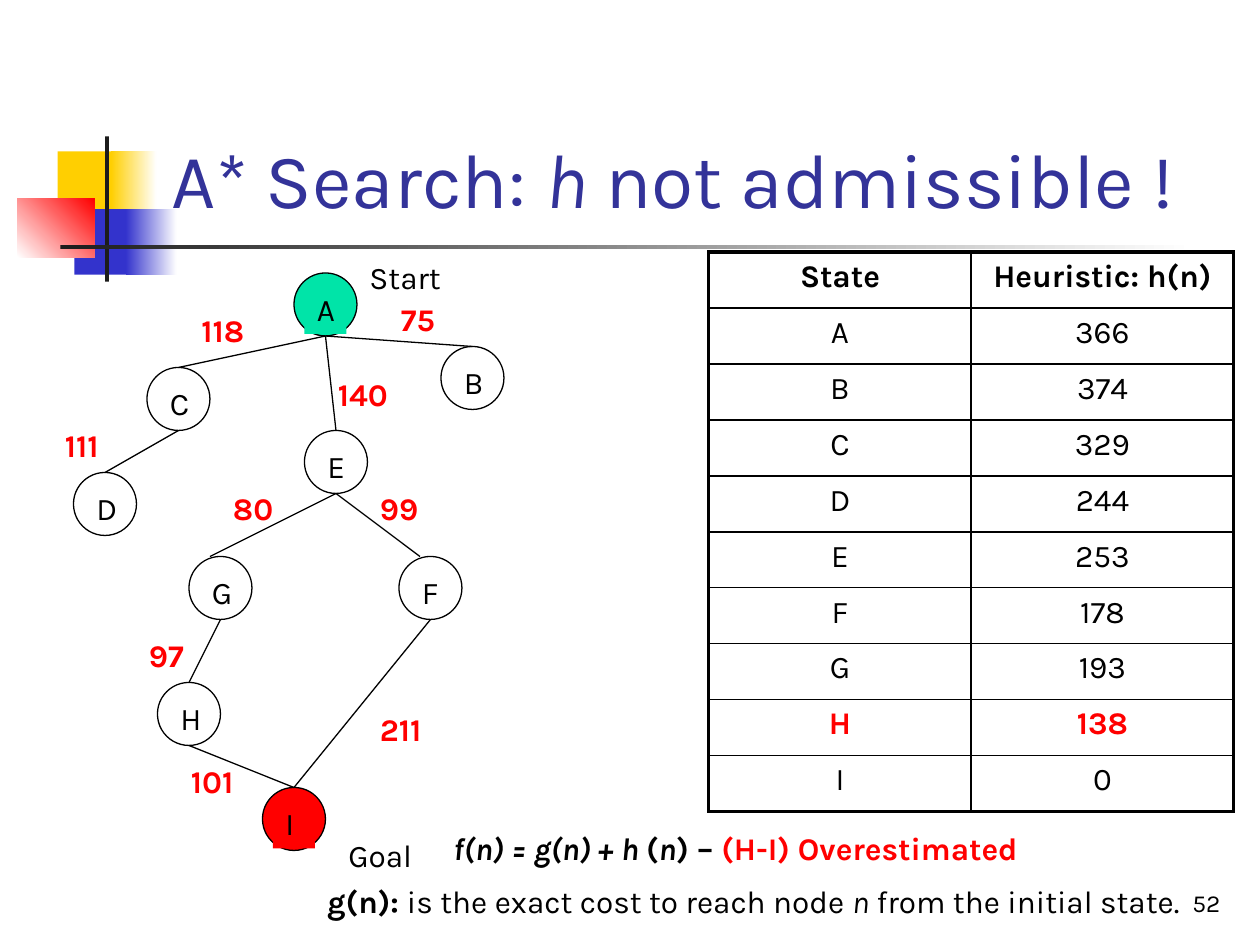
from dataclasses import dataclass
from typing import Optional

from lxml.etree import SubElement
from pptx import Presentation
from pptx.dml.color import RGBColor
from pptx.enum.shapes import MSO_CONNECTOR, MSO_SHAPE
from pptx.enum.text import MSO_ANCHOR, MSO_AUTO_SIZE, PP_ALIGN
from pptx.oxml.ns import qn
from pptx.util import Pt

BLACK = RGBColor(0x00, 0x00, 0x00)
WHITE = RGBColor(0xFF, 0xFF, 0xFF)
RED = RGBColor(0xFF, 0x00, 0x00)
GREEN = RGBColor(0x00, 0xE4, 0xA8)
YELLOW = RGBColor(0xFF, 0xCF, 0x01)
BLUE = RGBColor(0x33, 0x33, 0xCC)
INDIGO = RGBColor(0x33, 0x33, 0x99)
CHARCOAL = RGBColor(0x1C, 0x1C, 0x1C)
FONT = "Karla"
DIAMETER = 36
LABEL_HEIGHT = 28.8


@dataclass
class Block:
    left: float
    top: float
    width: float
    height: float
    color: RGBColor
    fade_to: Optional[RGBColor] = None
    angle: float = 0


@dataclass
class Node:
    name: str
    left: float
    top: float
    color: Optional[RGBColor] = None


@dataclass
class Edge:
    parent: str
    child: str
    cost: str
    cost_left: float
    cost_top: float
    end_shift: float = 0


BLOCKS = [
    Block(33, 86.5, 34.5, 37.5, YELLOW),
    Block(63.5, 86.5, 26, 37.5, YELLOW, WHITE),
    Block(42.5, 119.5, 33, 37.5, BLUE),
    Block(72, 119.5, 29, 37.5, BLUE, WHITE),
    Block(10, 113.5, 44, 33.5, WHITE, RED, 45),
    Block(60, 78, 2.25, 83, CHARCOAL),
    Block(34.5, 140, 648, 2.5, CHARCOAL, WHITE),
]
NODES = [
    Node("A", 168, 156, GREEN),
    Node("B", 252, 198),
    Node("C", 84, 210),
    Node("D", 42, 270),
    Node("E", 174, 246),
    Node("F", 228, 318),
    Node("G", 108, 318),
    Node("H", 90, 390),
    Node("I", 150, 450, RED),
]
EDGES = [
    Edge("A", "B", "75", 222, 168),
    Edge("A", "C", "118", 108, 174),
    Edge("A", "E", "140", 186, 211),
    Edge("C", "D", "111", 30, 240),
    Edge("E", "F", "99", 210, 276, -6),
    Edge("E", "G", "80", 126, 276, -6),
    Edge("G", "H", "97", 78, 360),
    Edge("F", "I", "211", 210, 402),
    Edge("H", "I", "101", 102, 432),
]
HEURISTICS = [
    ("State", "Heuristic: h(n)"),
    ("A", "366"), ("B", "374"), ("C", "329"), ("D", "244"), ("E", "253"),
    ("F", "178"), ("G", "193"), ("H", "138"), ("I", "0"),
]


def write(paragraph, text: str, size: float = 18, color: RGBColor = BLACK,
          bold: bool = False, italic: bool = False, align=PP_ALIGN.LEFT) -> None:
    paragraph.alignment = align
    run = paragraph.add_run()
    run.text = text
    run.font.name = FONT
    run.font.size = Pt(size)
    run.font.color.rgb = color
    run.font.bold = bold
    run.font.italic = italic


def add_text_box(slide, left: float, top: float, width: float, height: float = LABEL_HEIGHT):
    text_box = slide.shapes.add_textbox(Pt(left), Pt(top), Pt(width), Pt(height))
    text_box.text_frame.word_wrap = True
    return text_box


def add_block(slide, block: Block) -> None:
    shape = slide.shapes.add_shape(MSO_SHAPE.RECTANGLE, Pt(block.left), Pt(block.top),
                                   Pt(block.width), Pt(block.height))
    shape.shadow.inherit = False
    shape.line.fill.background()
    if block.fade_to is None:
        shape.fill.solid()
        shape.fill.fore_color.rgb = block.color
    else:
        shape.fill.gradient()
        shape.fill.gradient_angle = block.angle
        for stop, color in zip(shape.fill.gradient_stops, (block.color, block.fade_to)):
            stop.color.rgb = color


def add_node(slide, node: Node) -> None:
    circle = slide.shapes.add_shape(MSO_SHAPE.OVAL, Pt(node.left), Pt(node.top),
                                    Pt(DIAMETER), Pt(DIAMETER))
    circle.shadow.inherit = False
    circle.line.color.rgb = BLACK
    circle.line.width = Pt(0.75)
    label = add_text_box(slide, node.left + 6, node.top + 6, 24)
    write(label.text_frame.paragraphs[0], node.name)
    if node.color is None:
        circle.fill.background()
    else:
        for shape in (circle, label):
            shape.fill.solid()
            shape.fill.fore_color.rgb = node.color


def add_edge(slide, edge: Edge, nodes: dict[str, Node]) -> None:
    parent, child = nodes[edge.parent], nodes[edge.child]
    radius = DIAMETER / 2
    connector = slide.shapes.add_connector(
        MSO_CONNECTOR.STRAIGHT,
        Pt(parent.left + radius), Pt(parent.top + DIAMETER),
        Pt(child.left + radius + edge.end_shift), Pt(child.top))
    connector.line.color.rgb = BLACK
    connector.line.width = Pt(0.75)
    SubElement(connector._element.spPr, qn("a:effectLst"))
    cost = add_text_box(slide, edge.cost_left, edge.cost_top, 60)
    write(cost.text_frame.paragraphs[0], edge.cost, color=RED, bold=True)


def set_border(cell, side: str, width: float) -> None:
    line = SubElement(cell._tc.get_or_add_tcPr(), qn(f"a:ln{side}"), w=str(Pt(width)))
    fill = SubElement(line, qn("a:solidFill"))
    SubElement(fill, qn("a:srgbClr"), val=str(BLACK))


def add_heuristic_table(slide) -> None:
    row_count = len(HEURISTICS)
    table = slide.shapes.add_table(row_count, 2, Pt(405), Pt(144),
                                   Pt(300), Pt(32 * row_count)).table
    table.first_row = False
    table.horz_banding = False
    for row_index, values in enumerate(HEURISTICS):
        for column_index, value in enumerate(values):
            cell = table.cell(row_index, column_index)
            outer_sides = {"L": column_index == 0, "R": column_index == 1,
                           "T": row_index == 0, "B": row_index == row_count - 1}
            for side, is_outer in outer_sides.items():
                set_border(cell, side, 2.25 if is_outer else 1)
            cell.fill.background()
            overestimated = values[0] == "H"
            write(cell.text_frame.paragraphs[0], value, color=RED if overestimated else BLACK,
                  bold=overestimated or row_index == 0, align=PP_ALIGN.CENTER)


def add_title(slide) -> None:
    title = slide.shapes.title
    title.left, title.top, title.width, title.height = Pt(91), Pt(16.5), Pt(613.5), Pt(115)
    title.text_frame.auto_size = MSO_AUTO_SIZE.NONE
    title.text_frame.vertical_anchor = MSO_ANCHOR.BOTTOM
    for text, italic in (("A* Search: ", False), ("h", True), (" not admissible !", False)):
        write(title.text_frame.paragraphs[0], text, size=44, color=INDIGO, italic=italic)


def add_formula(slide) -> None:
    frame = add_text_box(slide, 180, 470, 522, 66).text_frame
    formula = frame.paragraphs[0]
    formula._p.get_or_add_pPr().set("marL", str(Pt(72)))
    for text, italic in (("f(n) = g(n) + h ", True), ("(", False), ("n", True), (") – ", False)):
        write(formula, text, bold=True, italic=italic)
    write(formula, "(H-I) Overestimated", color=RED, bold=True)
    definition = frame.add_paragraph()
    definition.space_before = Pt(9)
    write(definition, "g(n): ", bold=True)
    write(definition, "is the exact cost to reach node ")
    write(definition, "n", italic=True)
    write(definition, " from the initial state.")


def main() -> None:
    presentation = Presentation()
    presentation.slide_width, presentation.slide_height = Pt(720), Pt(540)
    slide = presentation.slides.add_slide(presentation.slide_layouts[5])
    for block in BLOCKS:
        add_block(slide, block)
    add_title(slide)
    for node in NODES:
        add_node(slide, node)
    nodes = {node.name: node for node in NODES}
    for edge in EDGES:
        add_edge(slide, edge, nodes)
    for text, left, top in (("Start", 204, 144), ("Goal", 192, 474)):
        write(add_text_box(slide, left, top, 96).text_frame.paragraphs[0], text)
    add_formula(slide)
    add_heuristic_table(slide)
    number = add_text_box(slide, 554.5, 492, 150, 36).text_frame
    number.vertical_anchor = MSO_ANCHOR.BOTTOM
    write(number.paragraphs[0], "52", size=14, align=PP_ALIGN.RIGHT)
    presentation.save("out.pptx")


if __name__ == "__main__":
    main()
